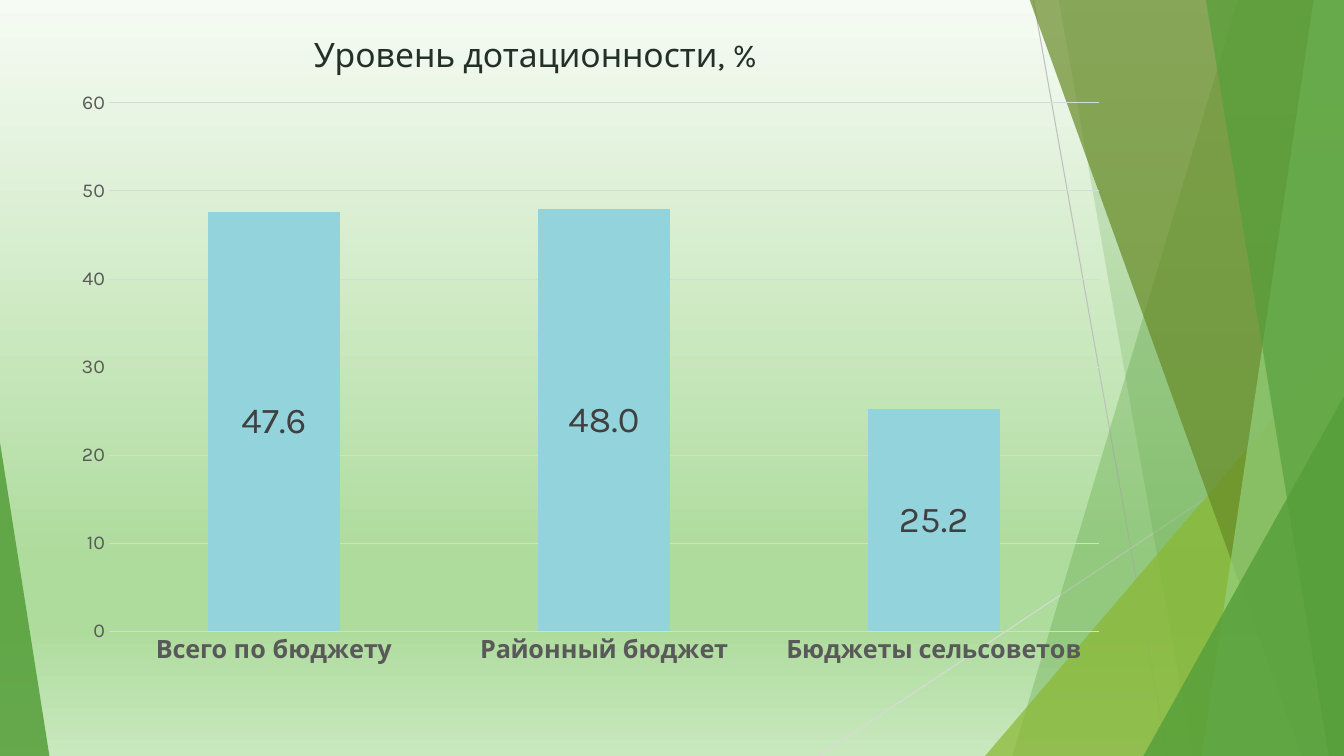
from lxml import etree
from pptx import Presentation
from pptx.chart.data import CategoryChartData
from pptx.dml.color import RGBColor
from pptx.enum.chart import XL_CHART_TYPE as ChartType, XL_LABEL_POSITION as LabelPosition, XL_TICK_MARK as TickMark
from pptx.enum.shapes import MSO_CONNECTOR as Connector, MSO_SHAPE as Preset
from pptx.enum.text import MSO_ANCHOR as Anchor, PP_ALIGN as Align
from pptx.oxml.ns import qn
from pptx.util import Inches, Pt

TITLE = "Уровень дотационности, %"
BUDGETS = {"Всего по бюджету": 47.6, "Районный бюджет": 48.0, "Бюджеты сельсоветов": 25.2}

WIDTH, HEIGHT, TOP = 13.33, 7.5, -0.01
THEME = {
    "font": "Karla",
    "title": {"size": 24, "color": "223028"},
    "category": {"size": 18, "color": "595959", "bold": True},
    "value": {"size": 14, "color": "595959", "bold": False},
    "label": {"size": 26, "color": "404040", "bold": False},
    "bar": "92D3DC",
    "grid": "D9D9D9",
    "outline": "076785",
    "green": "549E39",
    "lime": "8AB833",
    "olive": "678A26",
    "light": "93D07D",
    "background": [(0, "F6FBF4"), (74, "AEDC9D"), (83, "AEDC9D"), (100, "C9E8BE")],
}
RAYS = [((10.25, 0), (11.58, HEIGHT), "BFBFBF"), ((WIDTH, 4.03), (8.12, HEIGHT), "D9D9D9")]
FACETS = [
    ("band", (12.28, 10.04), "green", 30),
    ("band", (10.5, 11.83), "green", 20),
    ("triangle", (9.77, 3.33, 3.56, 1), "lime", 72),
    ("band", (10.21, 12.91), "olive", 70),
    ("band", (13.03, 11.92), "light", 70),
    ("band", (11.96, 13.18), "green", 65),
    ("triangle", (11.34, 3.93, 1.99, 1), "green", 80),
    ("triangle", (0, 4.39, 0.49, 0), "green", 85),
]
TITLE_BOX = (2.27, 0.34, 6.08, 0.45)
CHART_BOX = (0.6, 0.79, 10.51, 5.93)
PLOT_BOX = (1.08, 1.02, 9.82, 5.24)


def rgb(value):
    return RGBColor.from_string(value)


def set_font(font, style):
    font.name = THEME["font"]
    font.size = Pt(style["size"])
    font.color.rgb = rgb(style["color"])
    if "bold" in style:
        font.bold = style["bold"]


def add_color(parent, value):
    return etree.SubElement(parent, qn("a:srgbClr"), val=value)


def paint_background(slide):
    fill = slide.background.fill
    fill.gradient()
    fill.gradient_angle = 270
    stops = next(slide.element.iter(qn("a:gsLst")))
    for stop in list(stops):
        stops.remove(stop)
    for position, color in THEME["background"]:
        add_color(etree.SubElement(stops, qn("a:gs"), pos=str(position * 1000)), color)


def add_ray(slide, start, end, color):
    ends = [Inches(value) for value in (*start, *end)]
    ray = slide.shapes.add_connector(Connector.STRAIGHT, *ends)
    ray.line.color.rgb = rgb(color)
    ray.line.width = Pt(0.75)
    etree.SubElement(ray.element.spPr, qn("a:effectLst"))


def add_facet(slide, kind, geometry, color, opacity):
    if kind == "band":
        top_x, bottom_x = geometry
        corners = [(WIDTH, TOP), (WIDTH, HEIGHT), (bottom_x, HEIGHT)]
        builder = slide.shapes.build_freeform(Inches(top_x), Inches(TOP))
        builder.add_line_segments([(Inches(x), Inches(y)) for x, y in corners], close=True)
        shape = builder.convert_to_shape()
    else:
        left, top, width, apex = geometry
        box = [Inches(value) for value in (left, top, width, HEIGHT - top)]
        shape = slide.shapes.add_shape(Preset.ISOSCELES_TRIANGLE, *box)
        shape.adjustments[0] = apex
    shape.shadow.inherit = False
    shape.line.fill.background()
    shape.fill.solid()
    shape.fill.fore_color.rgb = rgb(THEME[color])
    solid_color = shape.element.spPr.find(qn("a:solidFill"))[0]
    etree.SubElement(solid_color, qn("a:alpha"), val=str(opacity * 1000))


def add_title(slide):
    frame = slide.shapes.add_textbox(*[Inches(value) for value in TITLE_BOX]).text_frame
    frame_format = {"word_wrap": True, "vertical_anchor": Anchor.MIDDLE}
    frame_format.update({f"margin_{side}": Inches(0.1) for side in ("left", "right", "top", "bottom")})
    for name, value in frame_format.items():
        setattr(frame, name, value)
    paragraph = frame.paragraphs[0]
    paragraph.alignment = Align.CENTER
    paragraph.line_spacing = 0.9
    run = paragraph.add_run()
    run.text = TITLE
    set_font(run.font, THEME["title"])
    outline = etree.Element(qn("a:ln"), w=str(Pt(0.75)))
    add_color(etree.SubElement(outline, qn("a:solidFill")), THEME["outline"])
    run.font._element.insert(0, outline)


def place_plot(chart):
    left, top, width, height = CHART_BOX
    plot_left, plot_top, plot_width, plot_height = PLOT_BOX
    fractions = {
        "x": (plot_left - left) / width,
        "y": (plot_top - top) / height,
        "w": plot_width / width,
        "h": plot_height / height,
    }
    area = next(chart.element.iter(qn("c:plotArea")))
    for old in area.findall(qn("c:layout")):
        area.remove(old)
    layout = etree.Element(qn("c:layout"))
    area.insert(0, layout)
    manual = etree.SubElement(layout, qn("c:manualLayout"))
    settings = {"layoutTarget": "inner", "xMode": "edge", "yMode": "edge"}
    settings.update({name: f"{value:.3f}" for name, value in fractions.items()})
    for name, value in settings.items():
        etree.SubElement(manual, qn(f"c:{name}"), val=value)


def add_budget_chart(slide):
    data = CategoryChartData(number_format="#,##0.0")
    data.categories = list(BUDGETS)
    data.add_series("Series 1", list(BUDGETS.values()))
    box = [Inches(value) for value in CHART_BOX]
    chart = slide.shapes.add_chart(ChartType.COLUMN_STACKED, *box, data).chart
    chart.has_legend = False
    chart.has_title = False
    set_font(chart.font, {"size": 10, "color": "000000"})
    for axis, style in ((chart.category_axis, "category"), (chart.value_axis, "value")):
        axis.major_tick_mark = axis.minor_tick_mark = TickMark.NONE
        axis.format.line.fill.background()
        set_font(axis.tick_labels.font, THEME[style])
    axis = chart.value_axis
    axis_format = {"minimum_scale": 0, "maximum_scale": 60, "major_unit": 10, "has_major_gridlines": True}
    for name, value in axis_format.items():
        setattr(axis, name, value)
    axis.tick_labels.number_format = "0"
    axis.tick_labels.number_format_is_linked = False
    axis.major_gridlines.format.line.color.rgb = rgb(THEME["grid"])
    axis.major_gridlines.format.line.width = Pt(0.75)
    plot = chart.plots[0]
    plot_format = {"gap_width": 150, "overlap": 100, "vary_by_categories": False, "has_data_labels": True}
    for name, value in plot_format.items():
        setattr(plot, name, value)
    bars = plot.series[0].format.fill
    bars.solid()
    bars.fore_color.rgb = rgb(THEME["bar"])
    label_format = {
        "show_value": True,
        "number_format": "#,##0.0",
        "number_format_is_linked": False,
        "position": LabelPosition.CENTER,
    }
    for name, value in label_format.items():
        setattr(plot.data_labels, name, value)
    set_font(plot.data_labels.font, THEME["label"])
    place_plot(chart)


def main():
    presentation = Presentation()
    presentation.slide_width = Inches(WIDTH)
    presentation.slide_height = Inches(HEIGHT)
    slide = presentation.slides.add_slide(presentation.slide_layouts[6])
    paint_background(slide)
    for ray in RAYS:
        add_ray(slide, *ray)
    for facet in FACETS:
        add_facet(slide, *facet)
    add_title(slide)
    add_budget_chart(slide)
    presentation.save("out.pptx")


if __name__ == "__main__":
    main()
